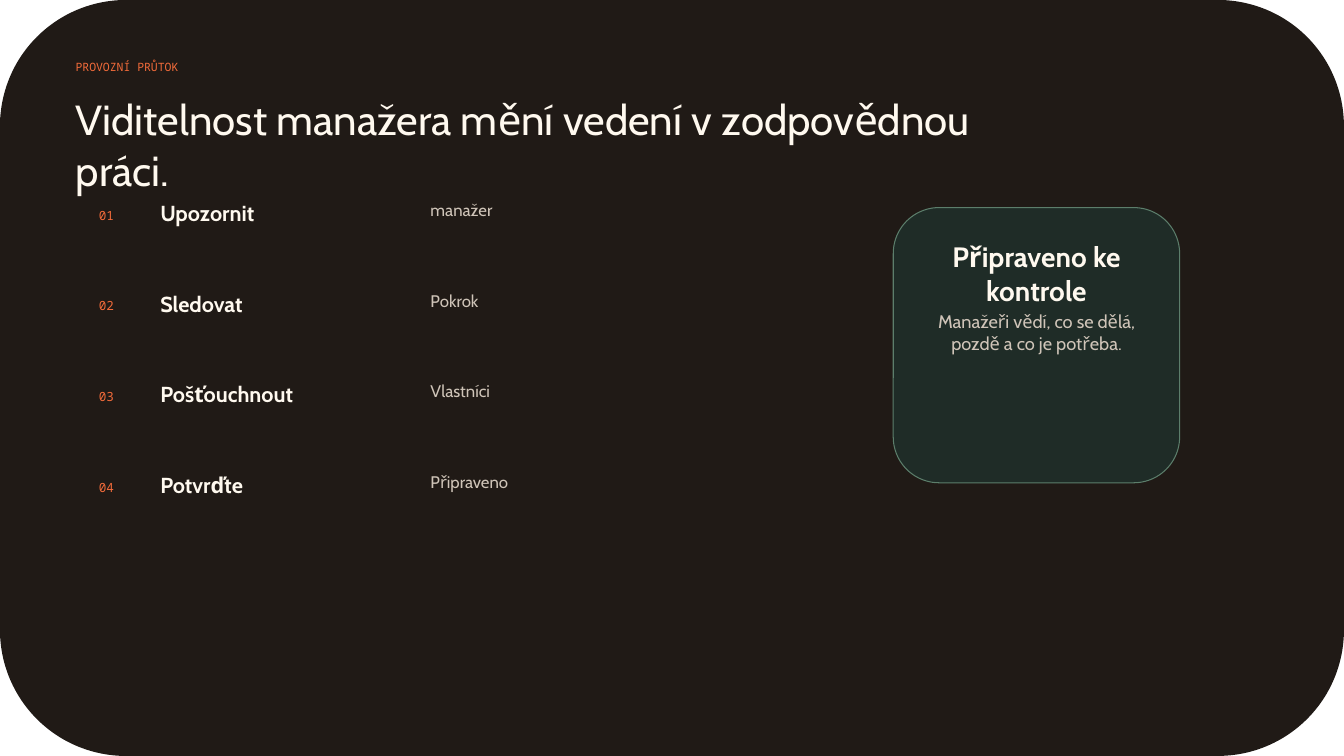
"""Builds the slide on manager visibility with four steps and a result card."""
from dataclasses import dataclass

from pptx import Presentation
from pptx.dml.color import RGBColor
from pptx.enum.shapes import MSO_SHAPE
from pptx.enum.text import MSO_ANCHOR, MSO_AUTO_SIZE, PP_ALIGN
from pptx.util import Inches, Pt

ROUNDED = MSO_SHAPE.ROUNDED_RECTANGLE
LEFT, CENTER = PP_ALIGN.LEFT, PP_ALIGN.CENTER
TOP, NO_FIT = MSO_ANCHOR.TOP, MSO_AUTO_SIZE.NONE

KICKER = "PROVOZNÍ PRŮTOK"
TITLE = "Viditelnost manažera mění vedení v zodpovědnou práci."
STEPS = [
    ("Upozornit", "manažer"),
    ("Sledovat", "Pokrok"),
    ("Pošťouchnout", "Vlastníci"),
    ("Potvrďte", "Připraveno"),
]
CARD_TITLE = "Připraveno ke kontrole"
CARD_TEXT = "Manažeři vědí, co se dělá, pozdě a co je potřeba."

WIDTH, HEIGHT = 13.33, 7.5
STEP_TOP, STEP_PITCH = 1.98, 0.9
CARD = (8.86, 2.06, 2.84, 2.73)
CARD_PAD = 0.27


@dataclass(frozen=True)
class Theme:
    """Colours and text styles as font, size, colour, bold."""
    panel: str = "201A16"
    card: str = "1F2C27"
    card_line: str = "5C7E6B"
    kicker: tuple = ("Noto Sans Mono", 8.2, "F26B3A", False)
    title: tuple = ("Cabin", 30, "FFF9EF", False)
    number: tuple = ("Noto Sans Mono", 9, "F26B3A", False)
    step: tuple = ("Cabin", 15.5, "FFF9EF", True)
    detail: tuple = ("Cabin", 12, "CFC4B8", False)
    card_title: tuple = ("Cabin", 20, "FFF9EF", True)
    card_text: tuple = ("Cabin", 13, "CFC4B8", False)


THEME = Theme()


def write(sp, text, style, align=LEFT):
    """Fill a shape with one styled paragraph and no insets."""
    tf = sp.text_frame
    tf.text = text
    tf.word_wrap = True
    tf.auto_size = NO_FIT
    tf.vertical_anchor = TOP
    tf.margin_left = tf.margin_top = tf.margin_right = tf.margin_bottom = 0
    p = tf.paragraphs[0]
    p.alignment = align
    font = p.runs[0].font
    font.name, size, color, font.bold = style
    font.size = Pt(size)
    font.color.rgb = RGBColor.from_string(color)


def add_text(s, box, text, style, align=LEFT):
    """Add a text box."""
    write(s.shapes.add_textbox(*map(Inches, box)), text, style, align)


def add_rounded(s, box, fill, line=None):
    """Add a flat rounded rectangle."""
    sp = s.shapes.add_shape(ROUNDED, *map(Inches, box))
    sp.shadow.inherit = False
    sp.fill.solid()
    sp.fill.fore_color.rgb = RGBColor.from_string(fill)
    if line:
        sp.line.color.rgb = RGBColor.from_string(line)
        sp.line.width = Pt(0.75)
    else:
        sp.line.fill.background()
    return sp


def main():
    """Build and save the slide."""
    prs = Presentation()
    prs.slide_width, prs.slide_height = Inches(WIDTH), Inches(HEIGHT)
    s = prs.slides.add_slide(prs.slide_layouts[5])

    title = s.shapes.title
    title.left, title.top, title.width, title.height = map(
        Inches, (0.75, 0.93, 9.41, 0.71))
    write(title, TITLE, THEME.title)
    panel = add_rounded(s, (0, 0, WIDTH, HEIGHT), THEME.panel)
    title.element.addprevious(panel.element)
    add_text(s, (0.75, 0.6, 4.59, 0.28), KICKER, THEME.kicker)

    for i, (step, detail) in enumerate(STEPS):
        top = STEP_TOP + i * STEP_PITCH
        add_text(s, (0.98, top + 0.08, 0.55, 0.24), f"{i + 1:02}", THEME.number)
        add_text(s, (1.59, top, 2.84, 0.28), step, THEME.step)
        add_text(s, (4.27, top, 3.94, 0.31), detail, THEME.detail)

    add_rounded(s, CARD, THEME.card, THEME.card_line)
    left, top, width, _ = CARD
    x, w = left + CARD_PAD, width - 2 * CARD_PAD
    add_text(s, (x, top + 0.32, w, 0.46), CARD_TITLE, THEME.card_title, CENTER)
    add_text(s, (x, top + 1.02, w, 0.98), CARD_TEXT, THEME.card_text, CENTER)

    prs.save("out.pptx")


if __name__ == "__main__":
    main()
